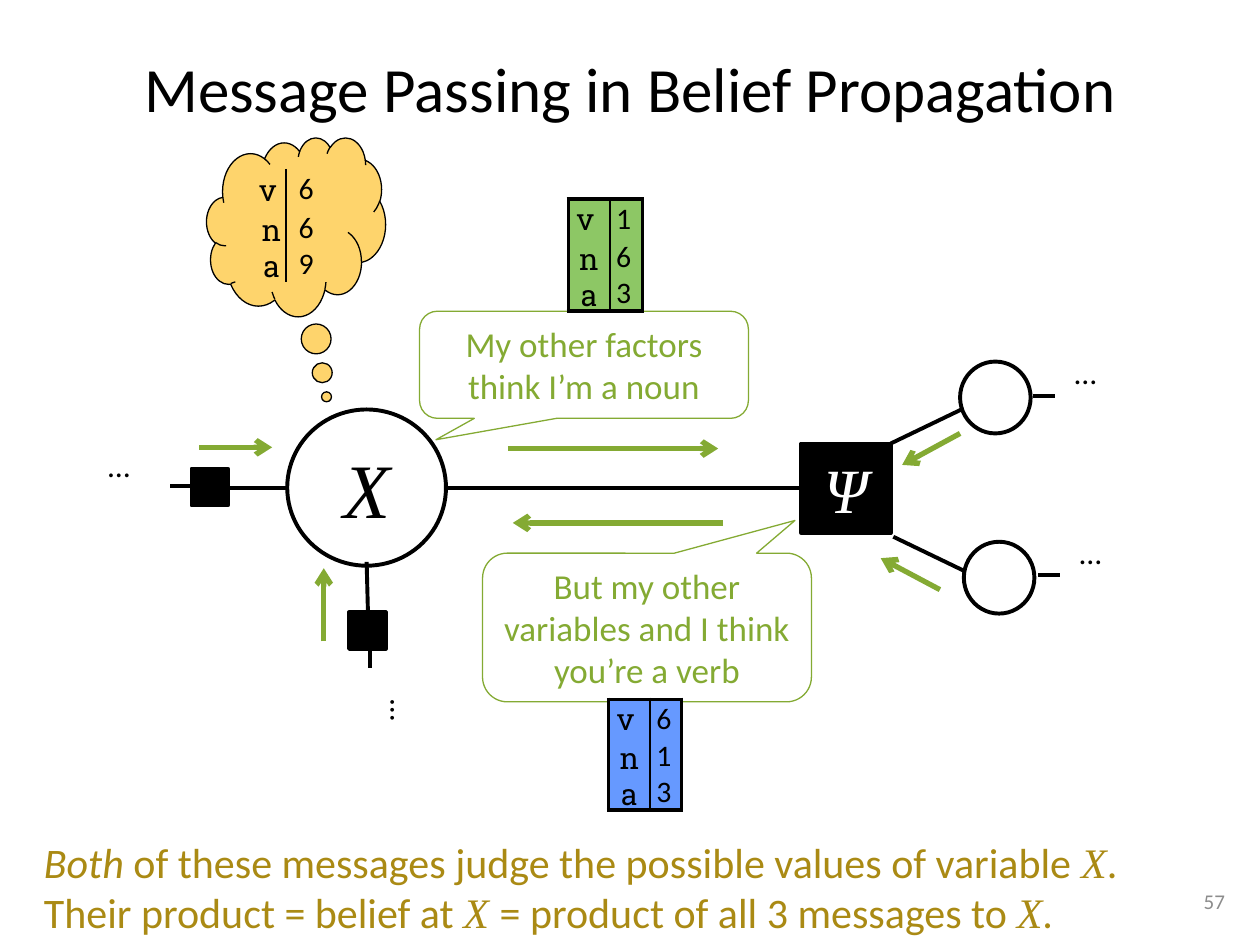
from typing import NamedTuple

from lxml import etree
from pptx import Presentation
from pptx.dml.color import RGBColor
from pptx.enum.shapes import MSO_CONNECTOR, MSO_SHAPE
from pptx.enum.text import MSO_ANCHOR, PP_ALIGN
from pptx.oxml.ns import qn
from pptx.util import Inches, Pt

BLACK = RGBColor(0x00, 0x00, 0x00)
WHITE = RGBColor(0xFF, 0xFF, 0xFF)
GRAY = RGBColor(0x8C, 0x8C, 0x8C)
MESSAGE_GREEN = RGBColor(0x84, 0xAA, 0x33)
TABLE_GREEN = RGBColor(0x8D, 0xC7, 0x65)
TABLE_BLUE = RGBColor(0x66, 0x99, 0xFF)
CLOUD_YELLOW = RGBColor(0xFE, 0xD4, 0x6C)
GOLD = RGBColor(0xAA, 0x8A, 0x14)

SANS, SERIF, SLAB = "Calibri", "Times New Roman", "Roboto Slab"
OVAL, SQUARE = MSO_SHAPE.OVAL, MSO_SHAPE.RECTANGLE
CALLOUT, CLOUD = MSO_SHAPE.ROUNDED_RECTANGULAR_CALLOUT, MSO_SHAPE.CLOUD_CALLOUT
STRAIGHT = MSO_CONNECTOR.STRAIGHT
LEFT, CENTER, RIGHT = PP_ALIGN.LEFT, PP_ALIGN.CENTER, PP_ALIGN.RIGHT
MIDDLE = MSO_ANCHOR.MIDDLE
NO_TABLE_STYLE = "{2D5ABB26-0587-4C30-8999-92F81FD0307C}"
TAGS = ("v ", "n", "a")


class Box(NamedTuple):
    left: float
    top: float
    width: float
    height: float

    def lengths(self):
        return [Inches(value) for value in self]


class Line(NamedTuple):
    x1: float
    y1: float
    x2: float
    y2: float


class Node(NamedTuple):
    kind: int
    box: Box
    fill: RGBColor
    label: str = ""
    size: int = 18


class Speech(NamedTuple):
    box: Box
    tip: tuple
    text: str


class Belief(NamedTuple):
    box: Box
    columns: tuple
    rows: tuple
    values: str
    fill: RGBColor
    inset: tuple
    outlined: bool = True


EDGES = [
    Line(6.36, 3.87, 3.54, 3.87), Line(2.92, 4.84, 2.91, 4.46),
    Line(1.81, 3.87, 2.27, 3.87), Line(1.52, 3.86, 1.35, 3.86),
    Line(2.94, 5.3, 2.94, 5.13), Line(7.07, 3.52, 7.63, 3.25),
    Line(7.09, 4.26, 7.65, 4.53), Line(8.37, 3.14, 8.2, 3.14),
    Line(8.41, 4.56, 8.24, 4.56),
]
MESSAGES = [
    Line(4.03, 3.56, 5.7, 3.56), Line(5.74, 4.15, 4.07, 4.15),
    Line(1.58, 3.55, 2.16, 3.55), Line(2.57, 5.09, 2.57, 4.51),
    Line(7.62, 3.44, 7.16, 3.69), Line(7.46, 4.68, 6.99, 4.43),
]
NODES = [
    Node(OVAL, Box(2.28, 3.25, 1.26, 1.24), WHITE, "X", 44),
    Node(OVAL, Box(7.62, 2.87, 0.56, 0.57), WHITE),
    Node(OVAL, Box(7.65, 4.3, 0.56, 0.57), WHITE),
    Node(SQUARE, Box(6.36, 3.52, 0.71, 0.71), BLACK, "Ψ", 36),
    Node(SQUARE, Box(2.77, 4.86, 0.29, 0.29), BLACK),
    Node(SQUARE, Box(1.52, 3.72, 0.29, 0.29), BLACK),
]
ELLIPSES = [Box(0.76, 3.49, 0.59, 0.57), Box(8.43, 2.75, 0.59, 0.57),
            Box(8.47, 4.18, 0.59, 0.57)]
SPEECHES = [
    Speech(Box(3.33, 2.47, 2.61, 0.85), (-0.45, 0.7),
           "My other factors think I’m a noun"),
    Speech(Box(3.83, 4.39, 2.61, 1.18), (0.45, -0.72),
           "But my other variables and I think you’re a verb"),
]
BELIEFS = [
    Belief(Box(4.51, 1.58, 0.58, 0.88), (0.33, 0.26), (0.32, 0.23, 0.28),
           "163", TABLE_GREEN, (0, 0.05)),
    Belief(Box(4.83, 5.55, 0.58, 0.87), (0.33, 0.25), (0.31, 0.23, 0.28),
           "613", TABLE_BLUE, (0, 0.05)),
    Belief(Box(1.94, 1.34, 0.75, 0.9), (0.33, 0.42), (0.33, 0.23, 0.23),
           "669", CLOUD_YELLOW, (0.1, 0.1), outlined=False),
]
CONCLUSION = [
    [("Both", SANS, True),
     (" of these messages judge the possible values of variable ", SANS, False),
     ("X", SERIF, True), (".", SANS, False)],
    [("Their product = belief at ", SANS, False), ("X ", SERIF, True),
     ("= product of all 3 messages to ", SANS, False),
     ("X", SERIF, True), (".", SANS, False)],
]


def style(paragraph, size: float, color: RGBColor, name=SANS, align=LEFT) -> None:
    paragraph.alignment = align
    font = paragraph.font
    font.size, font.name, font.color.rgb = Pt(size), name, color


def add_line(slide, line: Line, color: RGBColor, width: float, arrow=False) -> None:
    connector = slide.shapes.add_connector(STRAIGHT, *[Inches(value) for value in line])
    connector.line.color.rgb = color
    connector.line.width = Pt(width)
    if arrow:
        etree.SubElement(connector.line._get_or_add_ln(), qn("a:tailEnd"), type="arrow")
    etree.SubElement(connector._element.spPr, qn("a:effectLst"))


def add_shape(slide, kind: int, box: Box, fill, color: RGBColor, width: float):
    shape = slide.shapes.add_shape(kind, *box.lengths())
    shape.shadow.inherit = False
    if fill is None:
        shape.fill.background()
    else:
        shape.fill.solid()
        shape.fill.fore_color.rgb = fill
    shape.line.color.rgb = color
    shape.line.width = Pt(width)
    return shape


def add_node(slide, node: Node) -> None:
    shape = add_shape(slide, node.kind, node.box, node.fill, BLACK, 2.25)
    if node.label:
        frame = shape.text_frame
        frame.margin_left = frame.margin_right = 0
        frame.margin_top = frame.margin_bottom = 0
        frame.word_wrap = False
        frame.text = node.label
        color = WHITE if node.fill == BLACK else BLACK
        style(frame.paragraphs[0], node.size, color, SERIF, CENTER)
        frame.paragraphs[0].font.italic = True


def add_text(slide, box: Box, text: str, size: float, color: RGBColor, align=LEFT):
    frame = slide.shapes.add_textbox(*box.lengths()).text_frame
    frame.word_wrap = True
    frame.text = text
    style(frame.paragraphs[0], size, color, align=align)
    return frame


def add_speech(slide, speech: Speech) -> None:
    shape = add_shape(slide, CALLOUT, speech.box, None, MESSAGE_GREEN, 0.75)
    shape.adjustments[0], shape.adjustments[1] = speech.tip
    shape.text_frame.text = speech.text
    style(shape.text_frame.paragraphs[0], 20, MESSAGE_GREEN, align=CENTER)


def set_borders(cell, widths: dict) -> None:
    """Draw the sides with a width and hide the others."""
    properties = cell._tc.get_or_add_tcPr()
    for side in "LRTB":
        width = widths.get(side, 0)
        line = etree.SubElement(properties, qn("a:ln" + side), w=str(int(Pt(width))))
        if width:
            solid = etree.SubElement(line, qn("a:solidFill"))
            etree.SubElement(solid, qn("a:srgbClr"), val=str(BLACK))
        else:
            etree.SubElement(line, qn("a:noFill"))


def add_belief(slide, belief: Belief) -> None:
    frame = slide.shapes.add_table(len(TAGS), 2, *belief.box.lengths())
    table = frame.table
    table.first_row = table.horz_banding = False
    table._tbl.tblPr.find(qn("a:tableStyleId")).text = NO_TABLE_STYLE
    for column, width in zip(table.columns, belief.columns):
        column.width = Inches(width)
    last = len(TAGS) - 1
    for row, (tag, value) in enumerate(zip(TAGS, belief.values)):
        table.rows[row].height = Inches(belief.rows[row])
        for column, text in enumerate((tag, value)):
            cell = table.cell(row, column)
            borders = {"L" if column else "R": 1}
            if belief.outlined:
                borders["R" if column else "L"] = 2.25
                borders.update({"T": 2.25} if row == 0 else {})
                borders.update({"B": 2.25} if row == last else {})
            set_borders(cell, borders)
            cell.fill.solid()
            cell.fill.fore_color.rgb = belief.fill
            cell.margin_left = Inches(belief.inset[column])
            cell.margin_right = cell.margin_top = cell.margin_bottom = 0
            cell.vertical_anchor = MIDDLE
            cell.text = text
            paragraph = cell.text_frame.paragraphs[0]
            style(paragraph, 17, BLACK, *((SANS, LEFT) if column else (SLAB, CENTER)))
            paragraph.space_before = Pt(3.4)


def add_conclusion(slide) -> None:
    frame = add_text(slide, Box(0.25, 6.59, 9.17, 0.91), "", 24, GOLD)
    for paragraph in (frame.paragraphs[0], frame.add_paragraph()):
        style(paragraph, 24, GOLD)
    for paragraph, parts in zip(frame.paragraphs, CONCLUSION):
        for text, name, italic in parts:
            run = paragraph.add_run()
            run.text, run.font.name, run.font.italic = text, name, italic


def main() -> None:
    presentation = Presentation()
    presentation.slide_width, presentation.slide_height = Inches(10), Inches(7.5)
    slide = presentation.slides.add_slide(presentation.slide_layouts[5])
    title = slide.shapes.title
    title.left, title.top, title.width, title.height = Box(0.5, 0.3, 9, 0.79).lengths()
    title.text_frame.text = "Message Passing in Belief Propagation"
    title.text_frame.vertical_anchor = MIDDLE
    style(title.text_frame.paragraphs[0], 36, BLACK, align=CENTER)
    number = add_text(slide, Box(8.87, 6.95, 0.95, 0.4), "57", 12, GRAY, RIGHT)
    number.vertical_anchor = MIDDLE

    for node in NODES:
        add_node(slide, node)
    for edge in EDGES:
        add_line(slide, edge, BLACK, 2.25)
    for box in ELLIPSES:
        add_text(slide, box, "…", 18, BLACK)
    vertical = add_text(slide, Box(2.73, 5.45, 0.67, 0.56), "…", 18, BLACK)
    vertical._txBody.bodyPr.set("vert", "eaVert")
    vertical.paragraphs[0].space_before = Pt(9)
    for speech in SPEECHES:
        add_speech(slide, speech)
    for message in MESSAGES:
        add_line(slide, message, MESSAGE_GREEN, 3, arrow=True)
    cloud = add_shape(slide, CLOUD, Box(1.64, 1.09, 1.42, 1.42), CLOUD_YELLOW, BLACK, 0.75)
    cloud.adjustments[0], cloud.adjustments[1] = 0.17, 0.95
    for belief in BELIEFS:
        add_belief(slide, belief)
    add_conclusion(slide)
    presentation.save("out.pptx")


if __name__ == "__main__":
    main()
